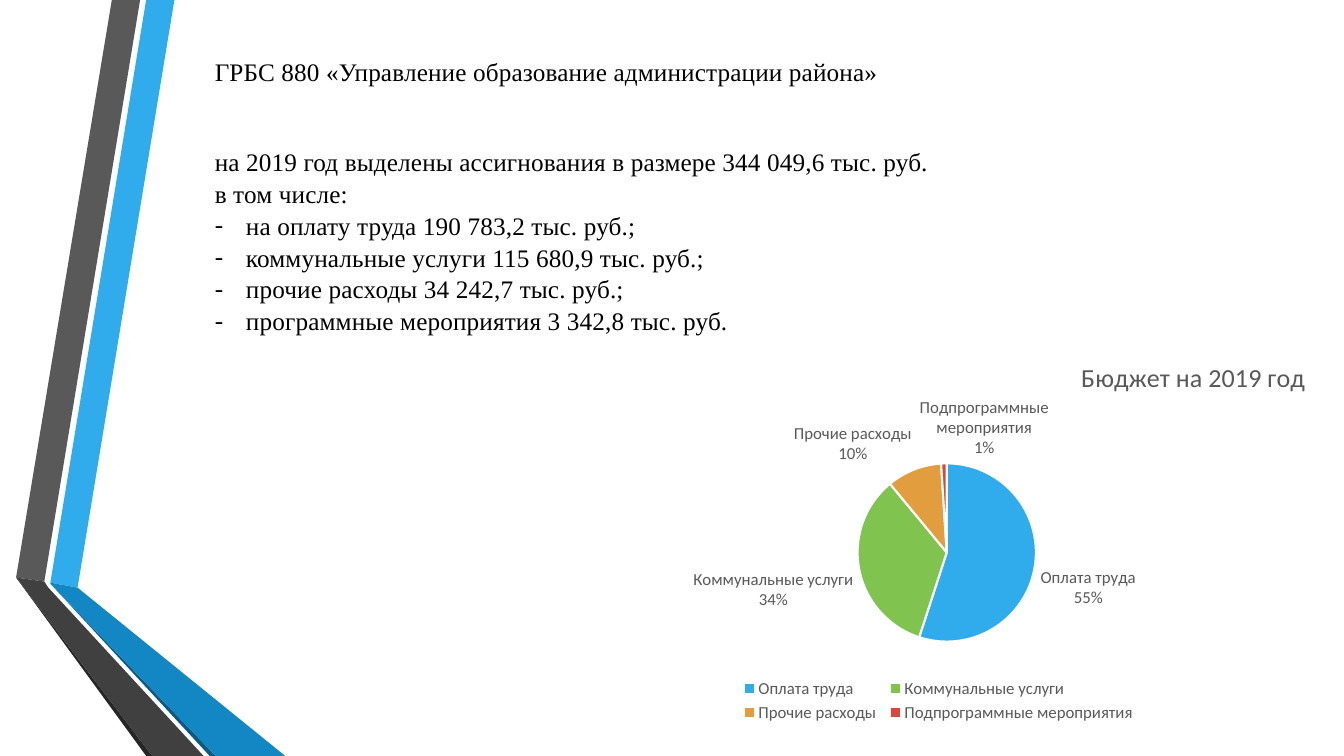
from dataclasses import dataclass

from lxml.etree import SubElement
from pptx import Presentation
from pptx.chart.data import CategoryChartData
from pptx.dml.color import RGBColor
from pptx.enum.chart import XL_CHART_TYPE, XL_LABEL_POSITION, XL_LEGEND_POSITION
from pptx.enum.text import MSO_ANCHOR, MSO_AUTO_SIZE, PP_ALIGN
from pptx.oxml import parse_xml
from pptx.oxml.ns import nsdecls, qn
from pptx.util import Inches, Pt


@dataclass(frozen=True)
class Theme:
    """Colours, fonts and type sizes of the slide."""
    text_font: str = "Times New Roman"
    chart_font: str = "Calibri"
    text: str = "000000"
    chart_text: str = "595959"
    slice_edge: str = "FFFFFF"
    slices: tuple = ("30ACEC", "80C34F", "E29D3E", "D64A3B")
    text_size: float = 18
    chart_title_size: float = 18.6
    label_size: float = 12


THEME = Theme()
WIDTH, HEIGHT = 13.33, 7.5
INDENT = 0.31
HEADING = "ГРБС 880 «Управление образование администрации района»"
INTRO = ["на 2019 год выделены ассигнования в размере 344 049,6 тыс. руб.", "в том числе:"]
EXPENSES = [
    "на оплату труда 190 783,2 тыс. руб.;",
    "коммунальные услуги 115 680,9 тыс. руб.;",
    "прочие расходы 34 242,7 тыс. руб.;",
    "программные мероприятия 3 342,8 тыс. руб.",
]
BUDGET_TITLE = "Бюджет на 2019 год"
BUDGET = {
    "Оплата труда": 55,
    "Коммунальные услуги": 34,
    "Прочие расходы": 10,
    "Подпрограммные мероприятия": 1,
}
RIBBONS = [
    ("30ACEC", [(0.5, 5.78), (0.77, 5.83), (1.73, 0), (1.45, 0)]),
    ("595959", [(1.39, 0), (1.11, 0), (0.16, 5.73), (0.44, 5.77)]),
    ("262626", [(0.16, 5.73), (1.45, 7.5), (1.51, 7.5)]),
    ("0C5A82", [(0.5, 5.79), (2.08, 7.5), (2.14, 7.5)]),
    ("1287C3", [(0.5, 5.79), (2.14, 7.5), (2.83, 7.5), (0.77, 5.83), (0.5, 5.78)]),
    ("404040", [(2.02, 7.5), (0.48, 5.83), (0.44, 5.77), (0.16, 5.73), (1.51, 7.5)]),
]


def style_font(font, name, size, color):
    """Apply a typeface, a size and a colour."""
    font.name, font.size, font.bold = name, Pt(size), False
    font.color.rgb = RGBColor.from_string(color)


def add_ribbons(slide, left, top, width, height):
    """Draw the folded ribbons, scaled from slide size to the box."""
    for color, outline in RIBBONS:
        corners = [(Inches(left + x * width / WIDTH), Inches(top + y * height / HEIGHT))
                   for x, y in outline]
        builder = slide.shapes.build_freeform(*corners[0])
        builder.add_line_segments(corners[1:], close=True)
        ribbon = builder.convert_to_shape()
        ribbon.shadow.inherit = False
        ribbon.fill.solid()
        ribbon.fill.fore_color.rgb = RGBColor.from_string(color)
        ribbon.line.fill.background()


def fill_placeholder(placeholder, box, lines, dashed=()):
    """Place a placeholder in the box and set its lines, dashing the listed ones."""
    placeholder.left, placeholder.top, placeholder.width, placeholder.height = map(Inches, box)
    frame = placeholder.text_frame
    frame.text = "\n".join(lines)
    frame.word_wrap = True
    frame.auto_size = MSO_AUTO_SIZE.NONE
    frame.vertical_anchor = MSO_ANCHOR.TOP
    for paragraph in frame.paragraphs:
        paragraph.alignment = PP_ALIGN.LEFT
        paragraph.line_spacing = 1.05
        paragraph.space_before = paragraph.space_after = Pt(0)
        properties = paragraph._p.get_or_add_pPr()
        indent = Inches(INDENT) if paragraph.text in dashed else 0
        properties.set("marL", str(indent))
        properties.set("indent", str(-indent))
        if indent:
            SubElement(properties, qn("a:buFont"), typeface=THEME.text_font)
            SubElement(properties, qn("a:buChar"), char="-")
        else:
            SubElement(properties, qn("a:buNone"))
        for run in paragraph.runs:
            style_font(run.font, THEME.text_font, THEME.text_size, THEME.text)
            run._r.get_or_add_rPr().set("spc", "10")


def layout_xml(x, y, width=None, height=None, target=None, edge=True):
    """Build a manual chart layout from shares of the chart's size."""
    settings = [("layoutTarget", target)]
    settings += [("xMode", "edge"), ("yMode", "edge")] if edge else []
    settings += [("x", x), ("y", y), ("w", width), ("h", height)]
    items = "".join(f'<c:{tag} val="{value}"/>' for tag, value in settings if value is not None)
    return f'<c:layout {nsdecls("c")}><c:manualLayout>{items}</c:manualLayout></c:layout>'


def set_layout(element, predecessor, layout):
    """Replace the layout of a chart part, keeping it after its predecessor."""
    for old in element.findall(qn("c:layout")):
        element.remove(old)
    before = element.find(qn(predecessor)) if predecessor else None
    position = 0 if before is None else element.index(before) + 1
    element.insert(position, parse_xml(layout))


def label_slices(plot):
    """Label slices with category and share, moving the smallest one aside."""
    plot.has_data_labels = True
    labels = plot.data_labels
    labels.show_category_name = labels.show_percentage = True
    labels.show_value = False
    labels.position = XL_LABEL_POSITION.OUTSIDE_END
    style_font(labels.font, THEME.chart_font, THEME.label_size, THEME.chart_text)
    series = plot.series[0]
    smallest = series.points[len(BUDGET) - 1].data_label
    style_font(smallest.font, THEME.chart_font, THEME.label_size, THEME.chart_text)
    smallest.position = XL_LABEL_POSITION.OUTSIDE_END
    group = series.data_labels
    group.show_category_name = group.show_percentage = True
    group.show_value = False
    group.position = XL_LABEL_POSITION.OUTSIDE_END
    style_font(group.font, THEME.chart_font, THEME.label_size, THEME.chart_text)
    label = next(plot._element.iter(qn("c:dLbl")))
    for tag, shown in (("showVal", "0"), ("showCatName", "1"), ("showPercent", "1")):
        label.find(qn(f"c:{tag}")).set("val", shown)
    set_layout(label, "c:idx", layout_xml(0.05, 0, edge=False))


def add_budget_chart(slide, left, top, width, height):
    """Add the budget pie with its title, labels and legend in the box."""
    data = CategoryChartData()
    data.categories = list(BUDGET)
    data.add_series(BUDGET_TITLE, list(BUDGET.values()))
    box = map(Inches, (left, top, width, height))
    chart = slide.shapes.add_chart(XL_CHART_TYPE.PIE, *box, data).chart
    style_font(chart.font, THEME.chart_font, THEME.label_size, THEME.chart_text)
    chart.has_title = True
    title = chart.chart_title
    title.text_frame.text = BUDGET_TITLE
    style_font(title.text_frame.paragraphs[0].runs[0].font,
               THEME.chart_font, THEME.chart_title_size, THEME.chart_text)
    set_layout(title._element, "c:tx", layout_xml(0.67, 0.08))
    chart.has_legend = True
    legend = chart.legend
    legend.position = XL_LEGEND_POSITION.BOTTOM
    legend.include_in_layout = False
    style_font(legend.font, THEME.chart_font, THEME.label_size, THEME.chart_text)
    set_layout(legend._element, "c:legendPos", layout_xml(0.25, 0.87, 0.5, 0.13))
    plot = chart.plots[0]
    plot.vary_by_categories = True
    for index, color in enumerate(THEME.slices):
        piece = plot.series[0].points[index].format
        piece.fill.solid()
        piece.fill.fore_color.rgb = RGBColor.from_string(color)
        piece.line.color.rgb = RGBColor.from_string(THEME.slice_edge)
        piece.line.width = Pt(1.5)
    label_slices(plot)
    plot_area = chart._chartSpace.chart.plotArea
    set_layout(plot_area, None, layout_xml(0.4, 0.35, 0.22, 0.44, "inner"))


def main():
    """Build and save the budget slide."""
    deck = Presentation()
    deck.slide_width, deck.slide_height = Inches(WIDTH), Inches(HEIGHT)
    slide = deck.slides.add_slide(deck.slide_layouts[1])
    add_ribbons(slide, 0, 0, WIDTH, HEIGHT)
    fill_placeholder(slide.shapes.title, (2.03, 0.49, 10.73, 0.4), [HEADING])
    fill_placeholder(slide.placeholders[1], (2.03, 1.39, 9.81, 1.92), INTRO + EXPENSES, EXPENSES)
    add_budget_chart(slide, 5.29, 3.19, 8.04, 4.02)
    deck.save("out.pptx")


if __name__ == "__main__":
    main()
